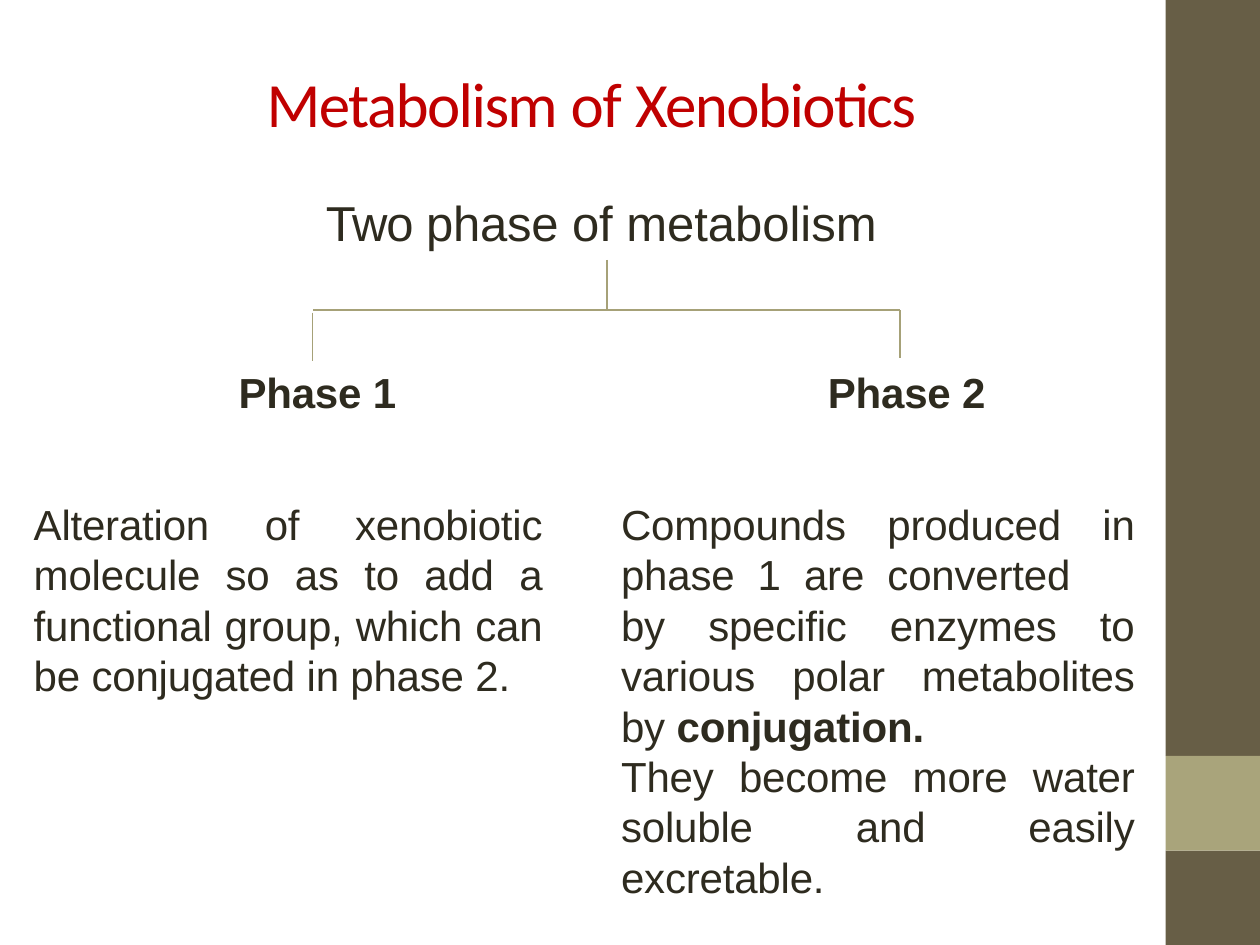
from dataclasses import dataclass

import pptx
import pptx.dml.color
import pptx.enum.shapes
import pptx.enum.text
import pptx.util
from pptx.oxml.ns import qn

Cm, Pt = pptx.util.Cm, pptx.util.Pt
Align = pptx.enum.text.PP_ALIGN


@dataclass(frozen=True)
class Theme:
    title: str = "C00000"
    text: str = "2E2B1F"
    line: str = "A6A178"
    band: str = "675E46"
    accent: str = "A9A47B"
    title_font: str = "Calibri"
    text_font: str = "Arial"
    title_size: int = 36
    heading_size: int = 28
    text_size: int = 24
    leading: float = 1.2
    line_width: float = 0.96


@dataclass(frozen=True)
class Frame:
    left: float
    top: float
    width: float
    height: float

    def lengths(self) -> tuple:
        return Cm(self.left), Cm(self.top), Cm(self.width), Cm(self.height)


@dataclass(frozen=True)
class Span:
    text: str
    bold: bool = False
    tracking: float = -0.1


@dataclass(frozen=True)
class Para:
    spans: tuple[Span, ...]
    align: Align = Align.JUSTIFY


THEME = Theme()
WIDE_SPACE = Span(" ", tracking=6.5)


def rgb(value: str) -> pptx.dml.color.RGBColor:
    return pptx.dml.color.RGBColor.from_string(value)


def place(shape, frame: Frame) -> None:
    shape.left, shape.top, shape.width, shape.height = frame.lengths()


def add_band(slide, frame: Frame, colour: str) -> None:
    band = slide.shapes.add_shape(pptx.enum.shapes.MSO_SHAPE.RECTANGLE, *frame.lengths())
    band.shadow.inherit = False
    band.fill.solid()
    band.fill.fore_color.rgb = rgb(colour)
    band.line.fill.background()


def add_line(slide, x1: float, y1: float, x2: float, y2: float) -> None:
    line = slide.shapes.add_connector(
        pptx.enum.shapes.MSO_CONNECTOR.STRAIGHT, Cm(x1), Cm(y1), Cm(x2), Cm(y2))
    line.line.color.rgb = rgb(THEME.line)
    line.line.width = Pt(THEME.line_width)
    properties = line._element.spPr
    properties.append(properties.makeelement(qn("a:effectLst"), {}))


def remove_bullet(paragraph) -> None:
    properties = paragraph._p.get_or_add_pPr()
    properties.set("marL", "0")
    properties.set("indent", "0")
    properties.append(properties.makeelement(qn("a:buNone"), {}))


def write(shape, paras: list[Para], size: int, colour: str = THEME.text,
          font: str = THEME.text_font, leading: float | None = THEME.leading,
          anchor=pptx.enum.text.MSO_ANCHOR.TOP) -> None:
    box = shape.text_frame
    box.word_wrap = True
    box.auto_size = pptx.enum.text.MSO_AUTO_SIZE.NONE
    box.vertical_anchor = anchor
    box.margin_left = box.margin_right = box.margin_bottom = 0
    box.margin_top = Cm(0.03)
    for index, para in enumerate(paras):
        paragraph = box.paragraphs[0] if index == 0 else box.add_paragraph()
        remove_bullet(paragraph)
        paragraph.alignment = para.align
        paragraph.space_before = paragraph.space_after = Pt(0)
        if leading:
            paragraph.line_spacing = Pt(size * leading)
        for span in para.spans:
            run = paragraph.add_run()
            run.text = span.text
            run.font.name = font
            run.font.size = Pt(size)
            run.font.bold = span.bold
            run.font.color.rgb = rgb(colour)
            run._r.get_or_add_rPr().set("spc", str(round(span.tracking * 100)))


def add_label(slide, frame: Frame, spans: tuple[Span, ...], size: int) -> None:
    write(slide.shapes.add_textbox(*frame.lengths()), [Para(spans, Align.LEFT)], size)


def main() -> None:
    deck = pptx.Presentation()
    deck.slide_width, deck.slide_height = Cm(25.4), Cm(19.05)
    slide = deck.slides.add_slide(deck.slide_layouts.get_by_name("Two Content"))
    title, left_column, right_column = list(slide.placeholders)[:3]

    # Sidebar
    for top, height, colour in ((0, 15.24, THEME.band), (17.15, 1.9, THEME.band),
                                (15.24, 1.91, THEME.accent)):
        add_band(slide, Frame(23.5, top, 1.9, height), colour)

    # Title and heading
    place(title, Frame(4.26, 1.24, 15.32, 1.6))
    title_spans = (Span("Metabolism ", tracking=-0.9), Span("of ", tracking=-0.6),
                   Span("Xenobiotics", tracking=-0.9))
    write(title, [Para(title_spans, Align.CENTER)], THEME.title_size, THEME.title,
          THEME.title_font, None, pptx.enum.text.MSO_ANCHOR.MIDDLE)
    add_label(slide, Frame(6.57, 3.86, 11.5, 1.24),
              (Span("Two ", tracking=-0.6), Span("phase "),
               Span("of metabolism", tracking=0)), THEME.heading_size)

    # Branching lines and phase labels
    stem, branch_top = 12.23, 6.25
    add_line(slide, stem, 5.24, stem, 6.22)
    for name, x, drop_top, drop_end, label_left in (
            ("Phase 1", 6.3, 6.3, 7.28, 4.81), ("Phase 2", 18.14, 6.25, 7.21, 16.69)):
        add_line(slide, stem, branch_top, x, branch_top)
        add_line(slide, x, drop_top, x, drop_end)
        add_label(slide, Frame(label_left, 7.36, 3.5, 1.09),
                  (Span(name, bold=True),), THEME.text_size)

    # Phase descriptions
    place(left_column, Frame(0.68, 10.02, 10.25, 4.14))
    write(left_column, [Para((Span(
        "Alteration of xenobiotic molecule so as to add a functional group, "
        "which can be conjugated in phase 2."),))], THEME.text_size)

    place(right_column, Frame(12.52, 10.02, 10.35, 8.2))
    write(right_column, [
        Para((Span("Compounds produced in phase"), WIDE_SPACE, Span("1"), WIDE_SPACE,
              Span("are"), WIDE_SPACE, Span("converted"))),
        Para((Span("by specific enzymes to various polar metabolites by "),
              Span("conjugation.", bold=True))),
        Para((Span("They become more water soluble and easily excretable."),)),
    ], THEME.text_size)

    deck.save("out.pptx")


if __name__ == "__main__":
    main()
